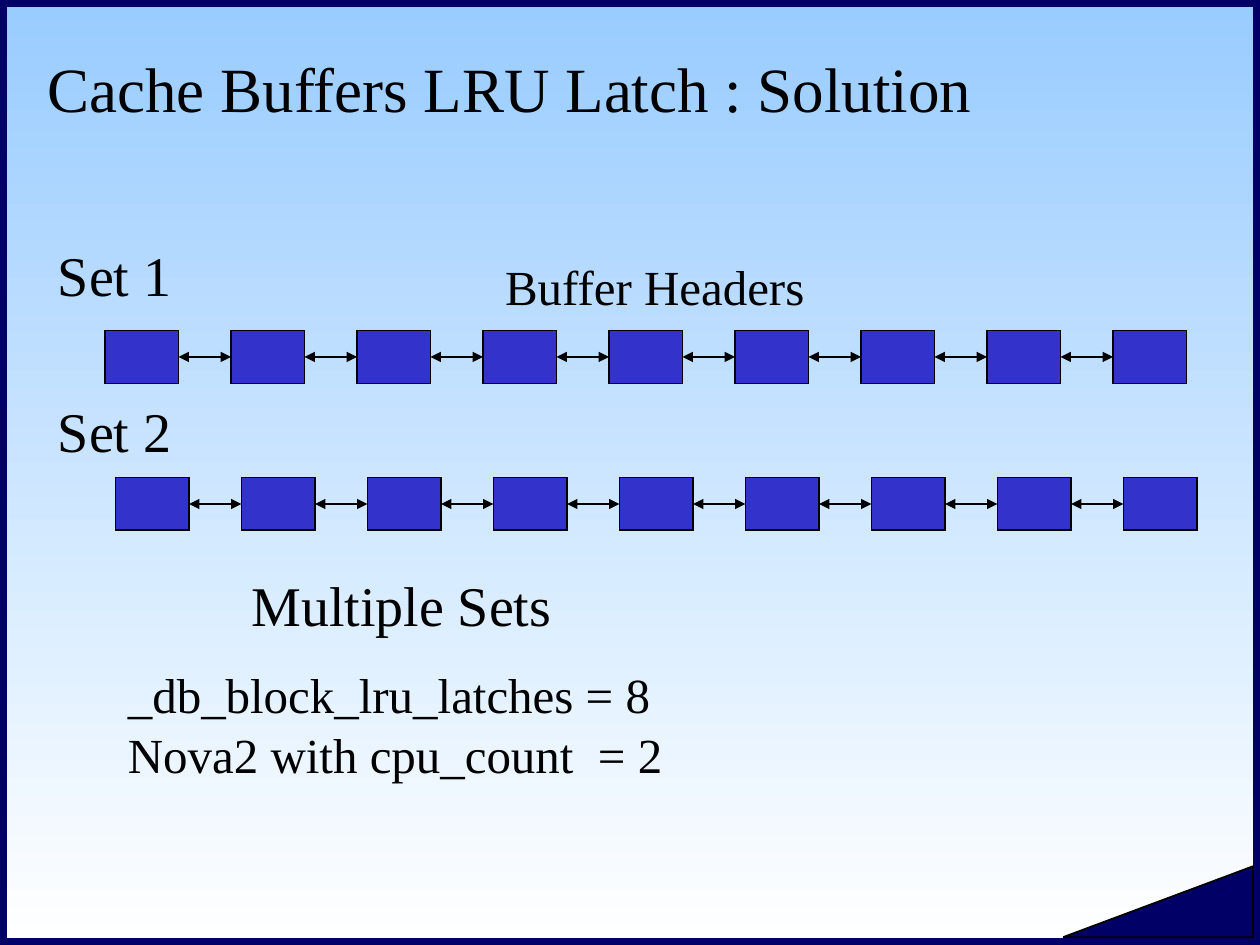
from itertools import pairwise

from lxml.etree import SubElement
from pptx import Presentation
from pptx.dml.color import RGBColor
from pptx.enum.shapes import MSO_CONNECTOR, MSO_SHAPE
from pptx.enum.text import MSO_ANCHOR, MSO_AUTO_SIZE, PP_ALIGN
from pptx.oxml.ns import qn
from pptx.util import Pt

THEME = {
    "font": "Times New Roman",
    "ink": RGBColor(0x00, 0x00, 0x00),
    "navy": RGBColor(0x00, 0x00, 0x66),
    "buffer": RGBColor(0x33, 0x33, 0xCC),
    "sky": RGBColor(0x99, 0xCC, 0xFF),
    "white": RGBColor(0xFF, 0xFF, 0xFF),
    "title": 36,
    "heading": 32,
    "body": 28,
}

TITLE = "Cache Buffers LRU Latch : Solution"
TITLE_AREA = (20, 20.5, 646.5, 58.5)

# lines, (left, top, width, height), size, format
LABELS = [
    (["Buffer Headers"], (281.5, 143, 240, 41), "body", {"wrap": True}),
    (["Multiple Sets"], (136.5, 322.5, 186.5, 45.5), "heading", {}),
    (["_db_block_lru_latches = 8", "Nova2 with cpu_count  = 2"],
     (66, 388, 320.5, 64), "body", {"line_spacing": 0.6}),
    (["Set 1"], (26, 134, 82, 45.5), "heading", {}),
    (["Set 2"], (26, 223, 82, 45.5), "heading", {}),
]

BUFFER_SETS = [(60, 189), (66, 273)]  # left and top of each chain
BUFFER_COUNT, BUFFER_PITCH = 9, 72
BUFFER_WIDTH, BUFFER_HEIGHT = 42, 30
RIGHT_SIDE, LEFT_SIDE = 3, 1


def write(frame, lines, size, *, wrap=False, line_spacing=None, space_before=0):
    frame.word_wrap = wrap
    for index, line in enumerate(lines):
        para = frame.paragraphs[0] if index == 0 else frame.add_paragraph()
        para.alignment = PP_ALIGN.LEFT
        para.space_before = Pt(space_before)
        if line_spacing:
            para.line_spacing = line_spacing
        span = para.add_run()
        span.text = line
        span.font.name = THEME["font"]
        span.font.size = Pt(size)
        span.font.color.rgb = THEME["ink"]


def add_box(shapes, kind, area, line, line_width, fill=None):
    box = shapes.add_shape(kind, *map(Pt, area))
    box.shadow.inherit = False
    if fill is None:
        box.fill.background()
    else:
        box.fill.solid()
        box.fill.fore_color.rgb = fill
    box.line.color.rgb = line
    box.line.width = Pt(line_width)
    SubElement(box.line._get_or_add_ln(), qn("a:miter"), lim="800000")
    return box


def add_double_arrow(shapes, start, end):
    arrow = shapes.add_connector(MSO_CONNECTOR.STRAIGHT, 0, 0, 0, 0)
    arrow.begin_connect(start, RIGHT_SIDE)
    arrow.end_connect(end, LEFT_SIDE)
    arrow.line.color.rgb = THEME["ink"]
    arrow.line.width = Pt(0.75)
    outline = arrow.line._get_or_add_ln()
    for tip in ("a:headEnd", "a:tailEnd"):
        SubElement(outline, qn(tip), type="triangle")
    SubElement(arrow._element.spPr, qn("a:effectLst"))


def add_buffer_chain(page, left, top):
    shapes = page.shapes.add_group_shape().shapes
    buffers = [
        add_box(shapes, MSO_SHAPE.RECTANGLE,
                (left + index * BUFFER_PITCH, top, BUFFER_WIDTH, BUFFER_HEIGHT),
                THEME["ink"], 0.75, THEME["buffer"])
        for index in range(BUFFER_COUNT)
    ]
    for start, end in pairwise(buffers):
        add_double_arrow(shapes, start, end)


def paint_background(page):
    fill = page.background.fill
    fill.gradient()
    fill.gradient_angle = 270
    for stop, color in zip(fill.gradient_stops, ("sky", "white")):
        stop.color.rgb = THEME[color]


def main():
    deck = Presentation()
    deck.slide_width, deck.slide_height = Pt(720), Pt(540)
    page = deck.slides.add_slide(deck.slide_layouts[5])
    paint_background(page)

    add_box(page.shapes, MSO_SHAPE.RECTANGLE, (2, 2, 716, 536), THEME["navy"], 4)
    corner = add_box(page.shapes, MSO_SHAPE.ISOSCELES_TRIANGLE,
                     (607.5, 495, 108.5, 40.5), THEME["ink"], 1, THEME["navy"])
    corner.adjustments[0] = 1

    title = page.shapes.title
    title.left, title.top, title.width, title.height = map(Pt, TITLE_AREA)
    title.text_frame.vertical_anchor = MSO_ANCHOR.MIDDLE
    write(title.text_frame, [TITLE], THEME["title"], wrap=True)

    for left, top in BUFFER_SETS:
        add_buffer_chain(page, left, top)

    for lines, area, role, options in LABELS:
        box = page.shapes.add_textbox(*map(Pt, area))
        size = THEME[role]
        write(box.text_frame, lines, size, space_before=size / 2, **options)
        box.text_frame.auto_size = MSO_AUTO_SIZE.SHAPE_TO_FIT_TEXT

    deck.save("out.pptx")


if __name__ == "__main__":
    main()
